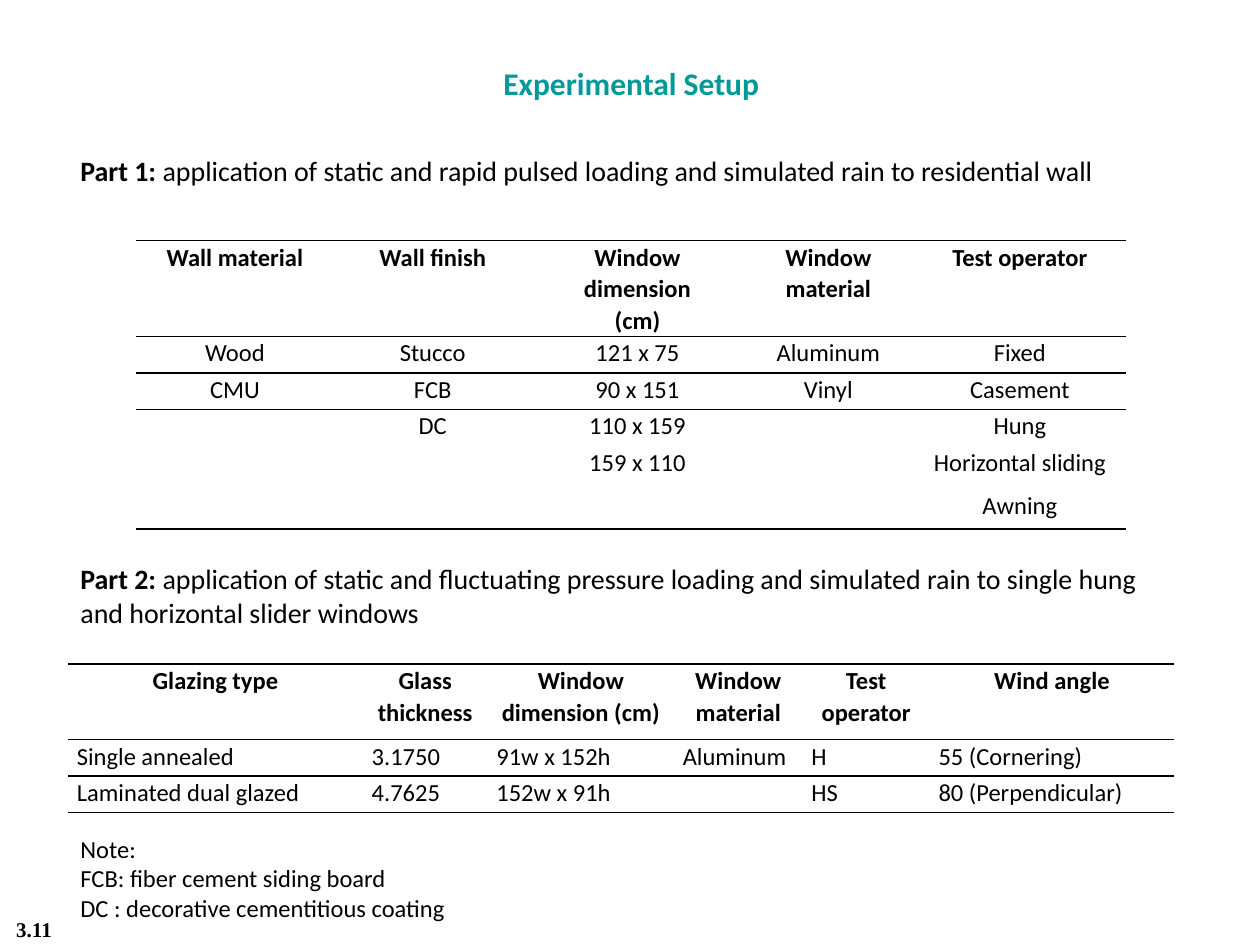
from dataclasses import dataclass

from lxml import etree
from pptx import Presentation
from pptx import util as u
from pptx.dml.color import RGBColor
from pptx.enum import text
from pptx.oxml import ns

CENTER, LEFT = text.PP_ALIGN.CENTER, text.PP_ALIGN.LEFT
TOP, MIDDLE = text.MSO_ANCHOR.TOP, text.MSO_ANCHOR.MIDDLE


@dataclass(frozen=True)
class Theme:
    body_font: str = "Calibri"
    number_font: str = "Times New Roman"
    ink: str = "000000"
    accent: str = "009999"
    title: int = 18
    heading: int = 16
    body: int = 14
    number: int = 12
    rule: float = 1
    line_spacing: float = 1.07
    plain_table: str = "{2D5ABB26-0587-4C30-8999-92F81FD0307C}"


THEME = Theme()


@dataclass(frozen=True)
class Label:
    box: tuple[float, float, float, float]
    words: str
    size: int
    lead: str = ""
    bold: bool = False
    color: str = THEME.ink
    font: str = THEME.body_font
    align: text.PP_ALIGN = LEFT
    anchor: text.MSO_ANCHOR = TOP


@dataclass(frozen=True)
class Grid:
    left: float
    top: float
    columns: list[float]
    heights: list[float]
    rows: list[list[str]]
    body_align: text.PP_ALIGN


# Wording and placement
LABELS = [
    Label((0.54, 1.17, 10, 0.37), "application of static and rapid pulsed loading "
          "and simulated rain to residential wall", THEME.heading, lead="Part 1: "),
    Label((0.54, 4.41, 10, 0.64), "application of static and fluctuating pressure loading "
          "and simulated rain to single hung\nand horizontal slider windows",
          THEME.heading, lead="Part 2: "),
    Label((0.02, 0.46, 9.98, 0.4), "Experimental Setup", THEME.title, bold=True,
          color=THEME.accent, align=CENTER),
    Label((0, 7.25, 0.54, 0.25), "3.11", THEME.number, bold=True,
          font=THEME.number_font, align=CENTER, anchor=MIDDLE),
    Label((0.54, 6.57, 5, 0.81), "Note:\nFCB: fiber cement siding board\n"
          "DC : decorative cementitious coating", THEME.body),
]

GRIDS = [
    Grid(1.08, 1.91, [1.57, 1.57, 1.68, 1.35, 1.69],
         [0.76, 0.29, 0.29, 0.29, 0.34, 0.32],
         [["Wall material", "Wall finish", "Window dimension\n(cm)",
           "Window material", "Test operator"],
          ["Wood", "Stucco", "121 x 75", "Aluminum", "Fixed"],
          ["CMU", "FCB", "90 x 151", "Vinyl", "Casement"],
          ["", "DC", "110 x 159", "", "Hung"],
          ["", "", "159 x 110", "", "Horizontal sliding"],
          ["", "", "", "", "Awning"]], CENTER),
    Grid(0.54, 5.27, [2.34, 0.99, 1.48, 1.02, 1.01, 1.94],
         [0.6, 0.29, 0.29],
         [["Glazing type", "Glass thickness", "Window dimension (cm)",
           "Window material", "Test operator", "Wind angle"],
          ["Single annealed", "3.1750", "91w x 152h", "Aluminum", "H", "55 (Cornering)"],
          ["Laminated dual glazed", "4.7625", "152w x 91h", "", "HS",
           "80 (Perpendicular)"]], LEFT),
]


def style_run(run, size: int, bold: bool, color: str = THEME.ink,
              font: str = THEME.body_font) -> None:
    run.font.size = u.Pt(size)
    run.font.bold = bold
    run.font.name = font
    run.font.color.rgb = RGBColor.from_string(color)


def add_label(slide, label: Label) -> None:
    frame = slide.shapes.add_textbox(*map(u.Inches, label.box)).text_frame
    frame.word_wrap = True
    frame.vertical_anchor = label.anchor
    frame.text = label.words
    for paragraph in frame.paragraphs:
        paragraph.alignment = label.align
    if label.lead:
        first = frame.paragraphs[0]
        rest = first.text
        first.text = label.lead
        first.add_run().text = rest
    for paragraph in frame.paragraphs:
        for run in paragraph.runs:
            bold = label.bold or run.text == label.lead
            style_run(run, label.size, bold, label.color, label.font)


def add_rule(cell, edge: str) -> None:
    properties = cell._tc.get_or_add_tcPr()
    line = etree.SubElement(properties, ns.qn(f"a:{edge}"), w=str(u.Pt(THEME.rule)))
    fill = etree.SubElement(line, ns.qn("a:solidFill"))
    etree.SubElement(fill, ns.qn("a:srgbClr"), val=THEME.ink)


def fill_cell(cell, words: str, bold: bool, align: text.PP_ALIGN) -> None:
    cell.fill.background()
    cell.margin_left = cell.margin_right = u.Inches(0.07)
    cell.margin_top = cell.margin_bottom = 0
    cell.text_frame.text = words
    for paragraph in cell.text_frame.paragraphs:
        paragraph.alignment = align
        paragraph.line_spacing = THEME.line_spacing
        for run in paragraph.runs:
            style_run(run, THEME.body, bold)
        if not words:  # keeps an empty cell from stretching its row
            etree.SubElement(paragraph._p, ns.qn("a:endParaRPr"), sz=str(THEME.body * 100))


def add_grid(slide, grid: Grid) -> None:
    frame = slide.shapes.add_table(
        len(grid.rows), len(grid.columns), u.Inches(grid.left), u.Inches(grid.top),
        u.Inches(sum(grid.columns)), u.Inches(sum(grid.heights)))
    table = frame.table
    table.first_row = table.horz_banding = False
    table._tbl.tblPr.find(ns.qn("a:tableStyleId")).text = THEME.plain_table
    for column, width in zip(table.columns, grid.columns):
        column.width = u.Inches(width)
    for row, height in zip(table.rows, grid.heights):
        row.height = u.Inches(height)

    # Rules frame the header, the first body row and the foot of the table
    last = len(grid.rows) - 1
    for r, row in enumerate(grid.rows):
        for c, words in enumerate(row):
            cell = table.cell(r, c)
            if r <= 2:
                add_rule(cell, "lnT")
            if r <= 1 or r == last:
                add_rule(cell, "lnB")
            fill_cell(cell, words, r == 0, CENTER if r == 0 else grid.body_align)


def main() -> None:
    deck = Presentation()
    deck.slide_width, deck.slide_height = u.Inches(10), u.Inches(7.5)
    slide = deck.slides.add_slide(deck.slide_layouts[6])
    for grid in GRIDS:
        add_grid(slide, grid)
    for label in LABELS:
        add_label(slide, label)
    deck.save("out.pptx")


if __name__ == "__main__":
    main()
